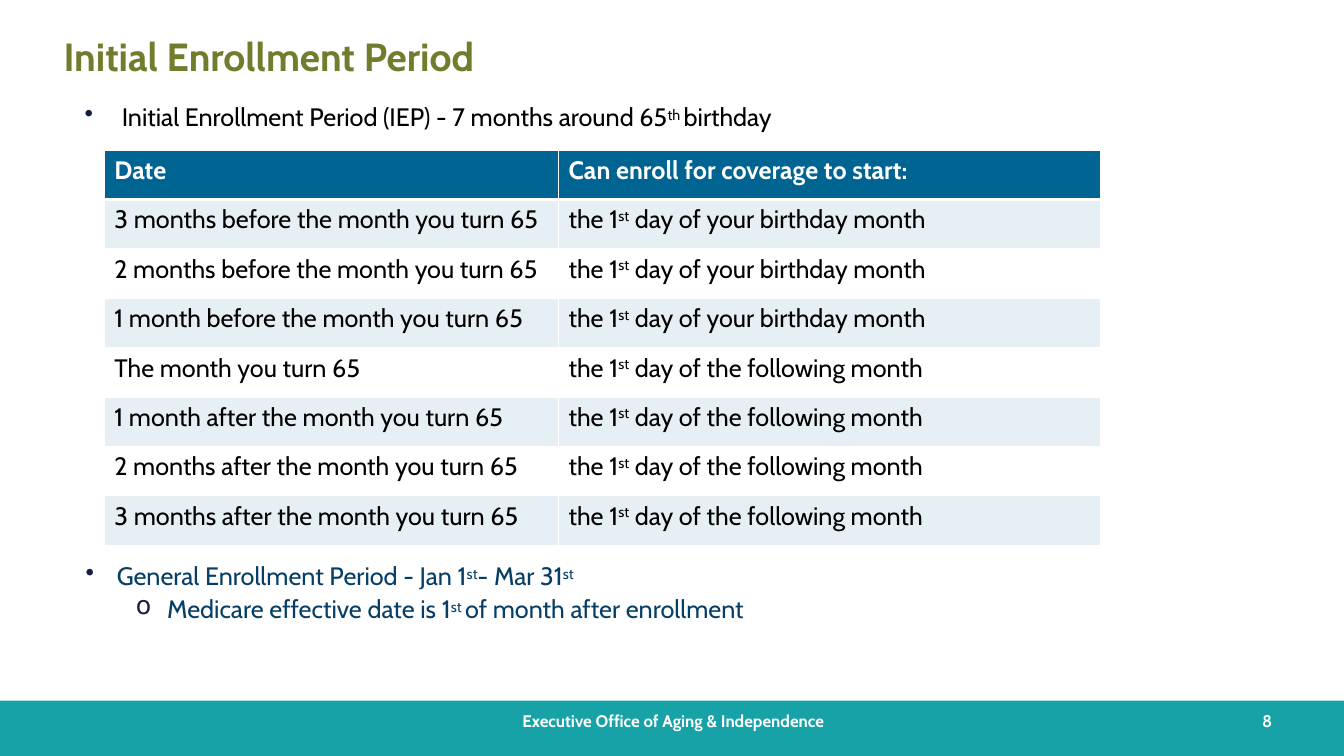
from dataclasses import dataclass

from lxml import etree
from pptx import Presentation
from pptx.dml.color import RGBColor
from pptx.enum.shapes import MSO_SHAPE
from pptx.enum.text import MSO_ANCHOR, PP_ALIGN
from pptx.oxml.ns import qn
from pptx.util import Pt

RECT = MSO_SHAPE.RECTANGLE
TOP, MIDDLE = MSO_ANCHOR.TOP, MSO_ANCHOR.MIDDLE
LEFT, CENTER, RIGHT = PP_ALIGN.LEFT, PP_ALIGN.CENTER, PP_ALIGN.RIGHT

FONT = "Cabin"
COLORS = {
    "white": "FFFFFF", "black": "000000", "teal": "16A2A7", "olive": "737B2D",
    "blue": "006493", "pale": "E5EFF4", "navy": "063E66", "bullet": "141D45",
}


@dataclass
class Line:
    """A paragraph; text between ^ marks is raised."""
    text: str
    color: str
    size: float = 18
    bold: bool = False
    align: PP_ALIGN = LEFT
    bullet: str = ""
    margin: float = 0
    hang: float = 0
    before: float = 0
    spacing: float = 1
    level: int = 0
    rise: int = 25


@dataclass
class Box:
    left: float
    top: float
    width: float
    height: float
    lines: list[Line]
    anchor: MSO_ANCHOR = TOP
    inset: bool = True


BOXES = [
    Box(319, 500.4, 324, 28.8, [
        Line("Executive Office of Aging & Independence", "white", 12, True, CENTER),
    ], MIDDLE),
    Box(879, 500.4, 36.8, 28.8, [Line("8", "white", 12, True, RIGHT)], MIDDLE),
    Box(45.4, 23.8, 871, 31.7, [
        Line("Initial Enrollment Period", "olive", 28, True),
    ], MIDDLE, False),
    Box(51.1, 69.1, 581.8, 48.2, [
        Line("Initial Enrollment Period (IEP) - 7 months around 65^th ^birthday",
             "black", bullet="•", margin=28.8, hang=26.6),
    ]),
    Box(51.1, 396.7, 581.8, 51.8, [
        Line("General Enrollment Period - Jan 1^st^- Mar 31^st^",
             "navy", bullet="•", margin=25.2, hang=22.3),
        Line("Medicare effective date is 1^st ^of month after enrollment",
             "navy", bullet="o", margin=61.2, hang=22.3,
             before=0.1, spacing=1.08, level=1),
    ]),
]

HEAD = ("Date", "Can enroll for coverage to start:")
BIRTH = "the 1^st^ day of your birthday month"
NEXT = "the 1^st^ day of the following month"
ROWS = [
    ("3 months before the month you turn 65", BIRTH),
    ("2 months before the month you turn 65", BIRTH),
    ("1 month before the month you turn 65", BIRTH),
    ("The month you turn 65", NEXT),
    ("1 month after the month you turn 65", NEXT),
    ("2 months after the month you turn 65", NEXT),
    ("3 months after the month you turn 65", NEXT),
]
COLS = (324.5, 387.4)
ROW = 35.28


def rgb(name: str) -> RGBColor:
    return RGBColor.from_string(COLORS[name])


def write(para, line: Line) -> None:
    para.alignment = line.align
    para.level = line.level
    para.line_spacing = line.spacing
    if line.before:
        para.space_before = Pt(line.before)
    if line.bullet:
        props = para._p.get_or_add_pPr()
        props.set("marL", str(Pt(line.margin)))
        props.set("indent", str(-Pt(line.hang)))
        tint = etree.SubElement(props, qn("a:buClr"))
        etree.SubElement(tint, qn("a:srgbClr"), val=COLORS["bullet"])
        etree.SubElement(props, qn("a:buChar"), char=line.bullet)
    font = para.font
    font.name, font.size, font.bold = FONT, Pt(line.size), line.bold
    font.color.rgb = rgb(line.color)
    for i, part in enumerate(line.text.split("^")):
        if part:
            run = para.add_run()
            run.text = part
            if i % 2:
                run._r.get_or_add_rPr().set("baseline", str(line.rise * 1000))


def add_box(shapes, box: Box) -> None:
    shape = shapes.add_textbox(
        Pt(box.left), Pt(box.top), Pt(box.width), Pt(box.height))
    frame = shape.text_frame
    frame.word_wrap = True
    frame.vertical_anchor = box.anchor
    if not box.inset:
        frame.margin_left = frame.margin_right = 0
        frame.margin_top = frame.margin_bottom = 0
    for i, line in enumerate(box.lines):
        write(frame.add_paragraph() if i else frame.paragraphs[0], line)


def edge(cell, side: str, width: float) -> None:
    """Give one side of a cell a white border."""
    props = cell._tc.get_or_add_tcPr()
    border = etree.SubElement(props, qn(f"a:ln{side}"), w=str(Pt(width)))
    fill = etree.SubElement(border, qn("a:solidFill"))
    etree.SubElement(fill, qn("a:srgbClr"), val=COLORS["white"])


def add_grid(shapes) -> None:
    rows = [HEAD, *ROWS]
    table = shapes.add_table(
        len(rows), len(COLS), Pt(74.5), Pt(107.3),
        Pt(sum(COLS)), Pt(ROW * len(rows))).table
    for col, width in zip(table.columns, COLS):
        col.width = Pt(width)
    for r, texts in enumerate(rows):
        table.rows[r].height = Pt(ROW)
        head = r == 0
        back = "blue" if head else "pale" if r % 2 else "white"
        for c, text in enumerate(texts):
            cell = table.cell(r, c)
            for side in "LRTB":
                thick = (head and side == "B") or (r == 1 and side == "T")
                edge(cell, side, 3 if thick else 1)
            cell.fill.solid()
            cell.fill.fore_color.rgb = rgb(back)
            write(cell.text_frame.paragraphs[0],
                  Line(text, "white" if head else "black", bold=head, rise=30))


def main() -> None:
    deck = Presentation()
    deck.slide_width, deck.slide_height = Pt(960), Pt(540)
    shapes = deck.slides.add_slide(deck.slide_layouts[6]).shapes
    band = shapes.add_shape(RECT, 0, Pt(500.4), Pt(960), Pt(39.6))
    band.shadow.inherit = False
    band.fill.solid()
    band.fill.fore_color.rgb = rgb("teal")
    band.line.fill.background()
    for box in BOXES:
        add_box(shapes, box)
    add_grid(shapes)
    deck.save("out.pptx")


if __name__ == "__main__":
    main()
